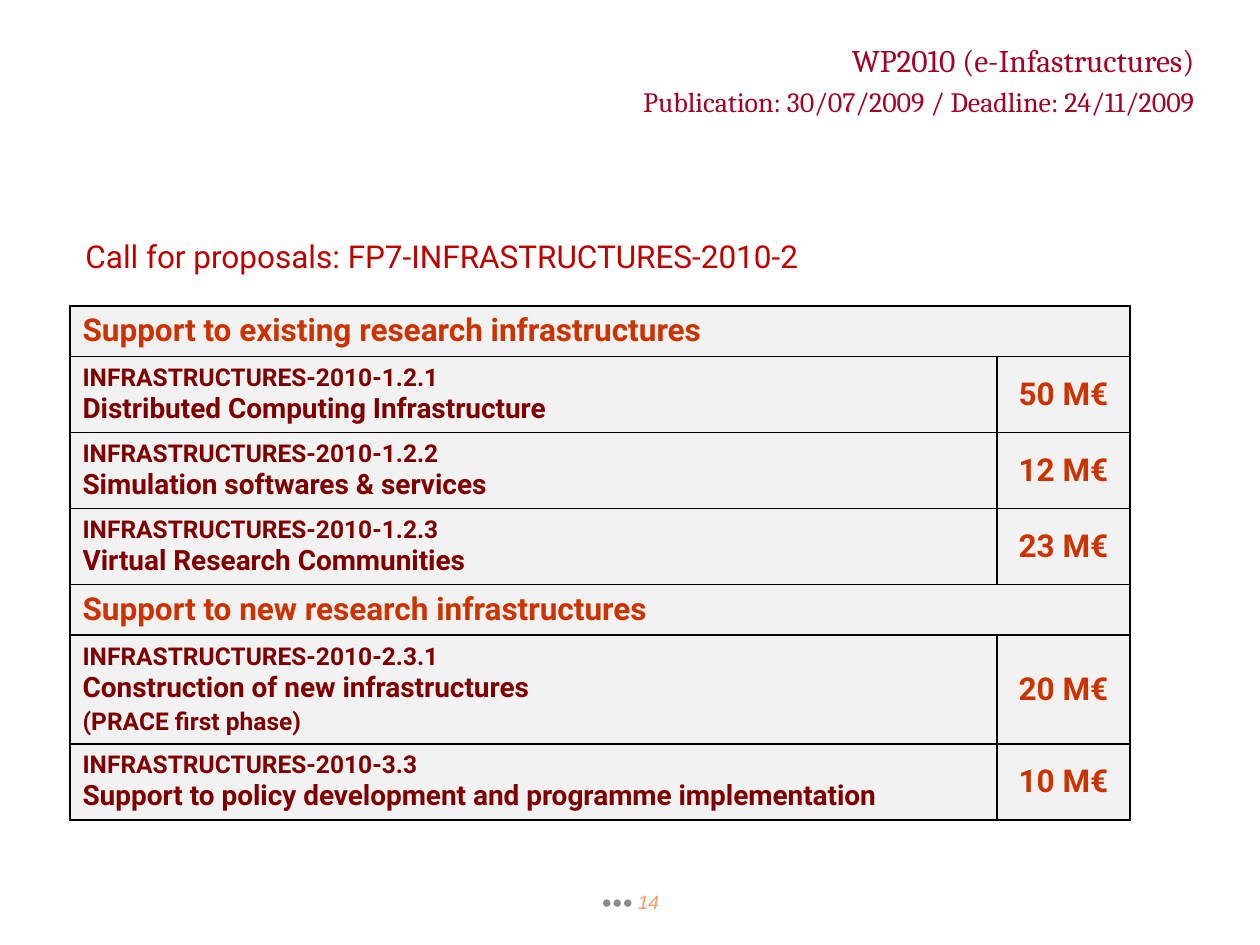
import pptx
import pptx.util
import pptx.dml.color
import pptx.enum.text
import pptx.oxml
import pptx.oxml.ns

SCALE = 7257
COLORS = {
    "wine": "A50021",
    "red": "C00000",
    "rust": "CC3300",
    "maroon": "800000",
    "gray": "8C8C8C",
    "peach": "FF9966",
    "pale": "F2F2F2",
    "black": "000000",
}
ALIGN = pptx.enum.text.PP_ALIGN
ANCHOR = pptx.enum.text.MSO_ANCHOR


def px(n):
    return pptx.util.Emu(n * SCALE)


def rgb(name):
    return pptx.dml.color.RGBColor.from_string(COLORS[name])


class Deck:
    def __init__(self, width, height):
        self.file = pptx.Presentation()
        self.file.slide_width = pptx.util.Inches(width)
        self.file.slide_height = pptx.util.Inches(height)
        self.slide = self.file.slides.add_slide(self.file.slide_layouts[6])
        self.face = "Roboto"

    def style(self, run, size, color, face=None, bold=False, italic=False):
        font = run.font
        font.size = pptx.util.Pt(size)
        font.name = face or self.face
        font.bold = bold
        font.italic = italic
        font.color.rgb = rgb(color)

    def fill(self, frame, lines, color, align=ALIGN.LEFT, face=None, bold=False):
        frame.text = "\n".join(text for text, size, gap in lines)
        for para, (text, size, gap) in zip(frame.paragraphs, lines):
            para.alignment = align
            para.space_before = pptx.util.Pt(gap)
            self.style(para.runs[0], size, color, face, bold)

    def box(self, x, y, w, h, anchor=ANCHOR.TOP):
        frame = self.slide.shapes.add_textbox(px(x), px(y), px(w), px(h)).text_frame
        frame.word_wrap = True
        frame.vertical_anchor = anchor
        return frame

    def text(self, place, lines, color, align=ALIGN.LEFT, face=None):
        self.fill(self.box(*place), lines, color, align, face)

    def footer(self, place, dots, number):
        para = self.box(*place, ANCHOR.MIDDLE).paragraphs[0]
        para.alignment = ALIGN.CENTER
        para.text = dots
        self.style(para.runs[0], 12, "gray", "Calibri")
        run = para.add_run()
        run.text = number
        self.style(run, 11, "peach", "Arial", italic=True)

    def border(self, cell):
        props = cell._tc.get_or_add_tcPr()
        for side in ("lnL", "lnR", "lnT", "lnB"):
            props.append(pptx.oxml.parse_xml(
                f'<a:{side} {pptx.oxml.ns.nsdecls("a")} w="12700"><a:solidFill>'
                f'<a:srgbClr val="{COLORS["black"]}"/></a:solidFill></a:{side}>'))

    def table(self, x, y, cols, rows):
        high = [row[0] for row in rows]
        grid = self.slide.shapes.add_table(
            len(rows), len(cols), px(x), px(y), px(sum(cols)), px(sum(high))).table
        for col, wide in zip(grid.columns, cols):
            col.width = px(wide)
        for i, (tall, lines, price) in enumerate(rows):
            grid.rows[i].height = px(tall)
            left, right = grid.cell(i, 0), grid.cell(i, 1)
            for cell in (left, right):
                self.border(cell)
                cell.fill.solid()
                cell.fill.fore_color.rgb = rgb("pale")
                cell.vertical_anchor = ANCHOR.MIDDLE
            self.fill(left.text_frame, lines, "maroon" if price else "rust", bold=True)
            if price:
                self.fill(right.text_frame, [(price, 18, 0)], "rust", ALIGN.CENTER, bold=True)
            else:
                left.merge(right)


def head(title):
    return 50, [(title, 18, 0)], None


def topic(code, title, price, note=None):
    lines = [("INFRASTRUCTURES-2010-" + code, 14, 0), (title, 16, 0)]
    if note:
        lines.append((note, 14, 2))
    return 109 if note else 76, lines, price


def main():
    deck = Deck(10, 7.5)
    deck.footer((431, 876, 399, 50), "••• ", "14")
    deck.text((73, 231, 1055, 64),
              [("Call for proposals: FP7-INFRASTRUCTURES-2010-2", 18, 3.6)], "red")
    deck.text((118, 35, 1089, 118),
              [("WP2010 (e-Infastructures)", 18, 0),
               ("Publication: 30/07/2009 / Deadline: 24/11/2009", 16, 3.2)],
              "wine", ALIGN.RIGHT, "Cambria")
    deck.table(70, 306, (927, 133), [
        head("Support to existing research infrastructures"),
        topic("1.2.1", "Distributed Computing Infrastructure", "50 M€"),
        topic("1.2.2", "Simulation softwares & services", "12 M€"),
        topic("1.2.3", "Virtual Research Communities", "23 M€"),
        head("Support to new research infrastructures"),
        topic("2.3.1", "Construction of new infrastructures", "20 M€", "(PRACE first phase)"),
        topic("3.3", "Support to policy development and programme implementation", "10 M€"),
    ])
    deck.file.save("out.pptx")


if __name__ == "__main__":
    main()
